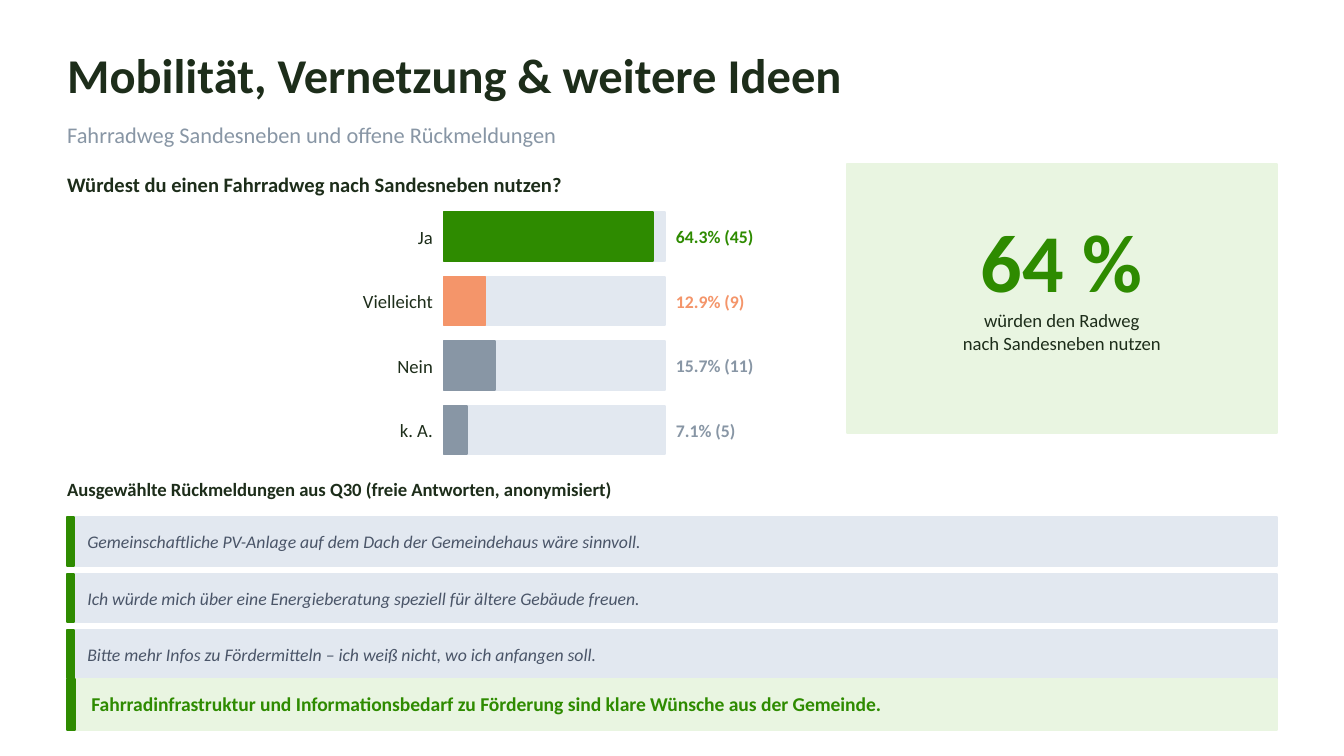
from pptx import Presentation
from pptx.dml.color import RGBColor
from pptx.enum.shapes import MSO_SHAPE as Shape
from pptx.enum.text import MSO_ANCHOR as Anchor, MSO_AUTO_SIZE as AutoSize, PP_ALIGN as Align
from pptx.util import Inches, Pt

INK, GREEN, ORANGE, GREY = "1D2D1A", "2E8B00", "F4956A", "8896A5"
PALE_GREEN, PALE_GREY, SLATE = "E9F5E1", "E2E8F0", "4A5568"
LEFT, WIDTH = 0.5, 9
BAR_HEIGHT, ROW_STEP, SCALE_MAX = 0.36, 0.48, 68
QUOTE_HEIGHT, QUOTE_STEP = 0.36, 0.42

ANSWERS = [
    ("Ja", 64.3, 45, GREEN),
    ("Vielleicht", 12.9, 9, ORANGE),
    ("Nein", 15.7, 11, GREY),
    ("k. A.", 7.1, 5, GREY),
]
QUOTES = [
    "Gemeinschaftliche PV-Anlage auf dem Dach der Gemeindehaus wäre sinnvoll.",
    "Ich würde mich über eine Energieberatung speziell für ältere Gebäude freuen.",
    "Bitte mehr Infos zu Fördermitteln – ich weiß nicht, wo ich anfangen soll.",
]


def color(value):
    return RGBColor.from_string(value)


def fill_text(box, lines, size, ink, align=Align.LEFT, anchor=Anchor.MIDDLE, **styles):
    frame = box.text_frame
    layout = {
        "margin_left": 0, "margin_top": 0, "margin_right": 0, "margin_bottom": 0,
        "word_wrap": True, "auto_size": AutoSize.NONE, "vertical_anchor": anchor,
    }
    for name, value in layout.items():
        setattr(frame, name, value)
    for index, line in enumerate(lines):
        para = frame.add_paragraph() if index else frame.paragraphs[0]
        para.alignment = align
        span = para.add_run()
        span.text = line
        for name, value in {"name": "Calibri", "size": Pt(size), **styles}.items():
            setattr(span.font, name, value)
        span.font.color.rgb = color(ink)


def add_text(page, left, top, width, height, lines, size, ink, **options):
    box = page.shapes.add_textbox(*map(Inches, (left, top, width, height)))
    fill_text(box, lines, size, ink, **options)


def add_block(page, left, top, width, height, fill):
    block = page.shapes.add_shape(Shape.RECTANGLE, *map(Inches, (left, top, width, height)))
    block.shadow.inherit = False
    block.fill.solid()
    block.fill.fore_color.rgb = color(fill)
    block.line.color.rgb = color(fill)
    block.line.width = Pt(1)


def add_heading(page, left, top, width):
    title = page.shapes.title
    place = {"left": left, "top": top, "width": width, "height": 0.55}
    for name, value in place.items():
        setattr(title, name, Inches(value))
    fill_text(title, ["Mobilität, Vernetzung & weitere Ideen"], 26, INK, bold=True)
    add_text(page, left, top + 0.57, width, 0.3,
             ["Fahrradweg Sandesneben und offene Rückmeldungen"], 12, GREY)


def add_survey(page, left, top, width):
    add_text(page, left, top, width, 0.3,
             ["Würdest du einen Fahrradweg nach Sandesneben nutzen?"], 11, INK, bold=True)
    bar_left, track = left + 2.8, 1.65
    for row, (label, percent, count, tint) in enumerate(ANSWERS):
        bar_top = top + 0.36 + row * ROW_STEP
        add_block(page, bar_left, bar_top, track, BAR_HEIGHT, PALE_GREY)
        add_block(page, bar_left, bar_top, track * percent / SCALE_MAX, BAR_HEIGHT, tint)
        add_text(page, left, bar_top - 0.01, 2.72, BAR_HEIGHT + 0.02,
                 [label], 10, INK, align=Align.RIGHT)
        add_text(page, bar_left + track + 0.08, bar_top, 0.9, BAR_HEIGHT,
                 [f"{percent}% ({count})"], 9.5, tint, bold=True)


def add_key_figure(page, left, top, width, height):
    add_block(page, left, top, width, height, PALE_GREEN)
    add_text(page, left, top + 0.08, width, 1, ["64 %"], 44, GREEN,
             align=Align.CENTER, anchor=Anchor.BOTTOM, bold=True)
    add_text(page, left, top + 1.08, width, 0.7,
             ["würden den Radweg", "nach Sandesneben nutzen"], 10, INK,
             align=Align.CENTER, anchor=Anchor.TOP)


def add_callout(page, left, top, width, height, fill, stripe, indent, inset,
                line, size, ink, **styles):
    add_block(page, left, top, width, height, fill)
    add_block(page, left, top, stripe, height, GREEN)
    add_text(page, left + indent, top + inset, width - 0.3, height - 2 * inset,
             [line], size, ink, **styles)


def add_feedback(page, left, top, width):
    add_text(page, left, top, width, 0.28,
             ["Ausgewählte Rückmeldungen aus Q30 (freie Antworten, anonymisiert)"],
             10, INK, bold=True)
    for row, quote in enumerate(QUOTES):
        add_callout(page, left, top + 0.35 + row * QUOTE_STEP, width, QUOTE_HEIGHT,
                    PALE_GREY, 0.05, 0.15, 0.02, quote, 9.5, SLATE, italic=True)


def main():
    deck = Presentation()
    deck.slide_width, deck.slide_height = Inches(10), Inches(10) * 9 // 16
    page = deck.slides.add_slide(deck.slide_layouts.get_by_name("Title Only"))
    add_heading(page, LEFT, 0.28, WIDTH)
    add_survey(page, LEFT, 1.22, 5.5)
    add_key_figure(page, 6.3, 1.22, 3.2, 2)
    add_feedback(page, LEFT, 3.5, WIDTH)
    add_callout(page, LEFT, 5.05, WIDTH, 0.38, PALE_GREEN, 0.06, 0.18, 0.01,
                "Fahrradinfrastruktur und Informationsbedarf zu Förderung "
                "sind klare Wünsche aus der Gemeinde.", 10.5, GREEN, bold=True)
    deck.save("out.pptx")


if __name__ == "__main__":
    main()
